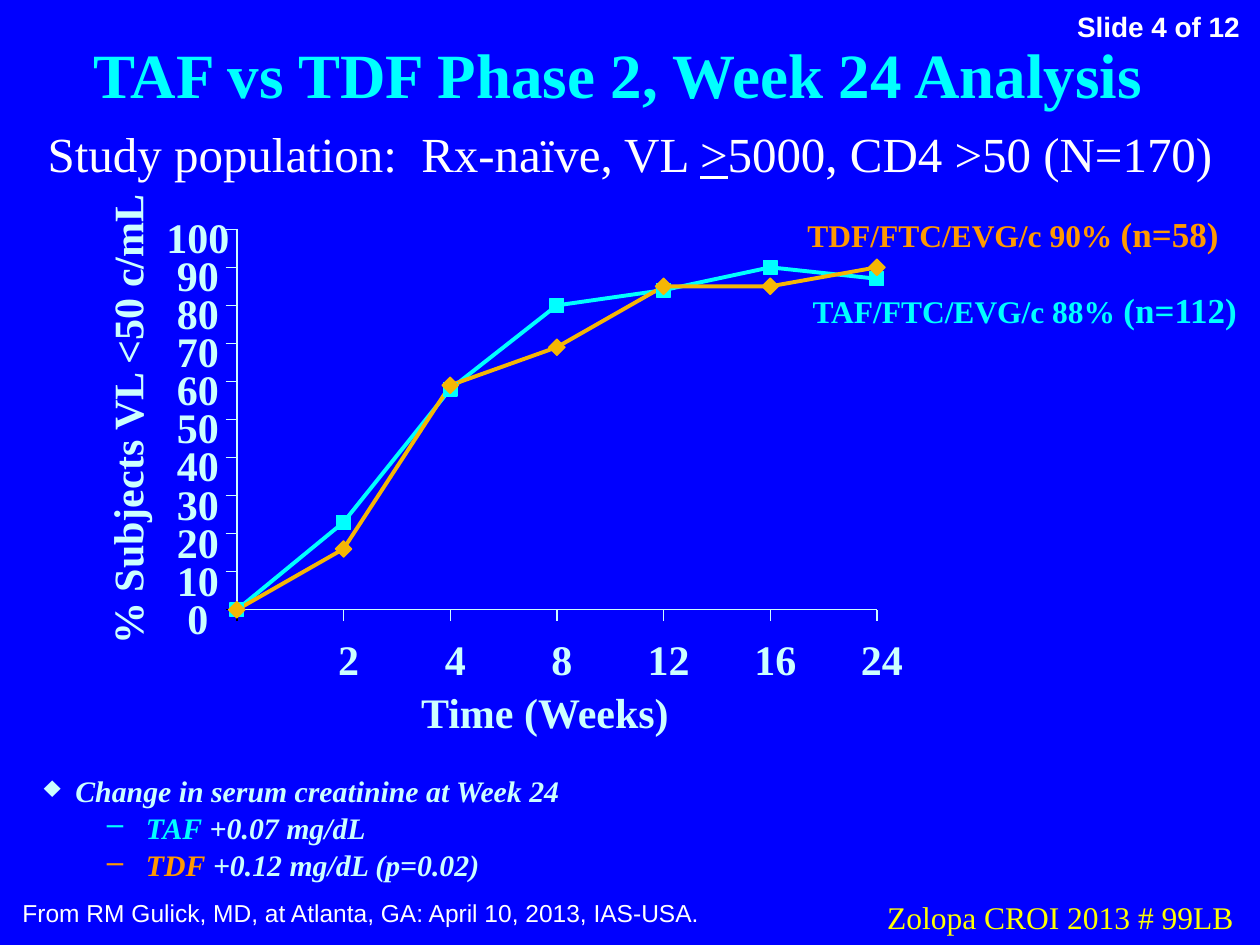
from lxml import etree
from pptx import Presentation
from pptx.dml.color import RGBColor
from pptx.enum import shapes, text
from pptx.oxml.ns import qn
from pptx.util import Inches, Pt

BLUE = RGBColor(0x00, 0x00, 0xFF)
WHITE = RGBColor(0xFF, 0xFF, 0xFF)
BLACK = RGBColor(0x00, 0x00, 0x00)
YELLOW = RGBColor(0xFF, 0xFF, 0x00)
CYAN = RGBColor(0x00, 0xFF, 0xFF)
PALE = RGBColor(0xCC, 0xFF, 0xFF)
GOLD = RGBColor(0xF5, 0xB6, 0x05)
ORANGE = RGBColor(0xFF, 0x99, 0x00)
SERIF = "Times New Roman"

# Plot geometry in inches: origin, step per visit, height per percent
ORIGIN_X, ORIGIN_Y = 1.88, 4.84
STEP_X, PERCENT_Y = 5.08 / 6, 3.02 / 100
TICK = 0.09
WEEKS = [0, 2, 4, 8, 12, 16, 24]
TAF = [0, 23, 58, 80, 84, 90, 87]
TDF = [0, 16, 59, 69, 85, 85, 90]


def plot_points(values):
    return [(ORIGIN_X + i * STEP_X, ORIGIN_Y - value * PERCENT_Y)
            for i, value in enumerate(values)]


def style_font(font, size, color, bold=False, italic=False, name=SERIF):
    font.name, font.size, font.bold, font.italic = name, Pt(size), bold, italic
    font.color.rgb = color


def add_text(slide, box, content, size, color, bold=False, name=SERIF,
             align=text.PP_ALIGN.LEFT, inset=True):
    """Add a one-paragraph text box; content is a list of run texts."""
    shape = slide.shapes.add_textbox(*map(Inches, box))
    frame = shape.text_frame
    frame.word_wrap = True
    if not inset:
        frame.margin_left = frame.margin_right = 0
        frame.margin_top = frame.margin_bottom = 0
    paragraph = frame.paragraphs[0]
    paragraph.alignment = align
    style_font(paragraph.font, size, color, bold, name=name)
    for part in content:
        paragraph.add_run().text = part
    return shape


def add_axis_text(slide, box, content):
    return add_text(slide, box, [content], 24, PALE, True,
                    align=text.PP_ALIGN.CENTER, inset=False)


def add_line(slide, x1, y1, x2, y2, color=PALE):
    line = slide.shapes.add_connector(
        shapes.MSO_CONNECTOR.STRAIGHT, *map(Inches, (x1, y1, x2, y2)))
    line.line.color.rgb = color
    line.line.width = Pt(0.75)
    etree.SubElement(line._element.spPr, qn("a:effectLst"))


def add_series_line(slide, values, color):
    start, *rest = [(Inches(x), Inches(y)) for x, y in plot_points(values)]
    builder = slide.shapes.build_freeform(*start)
    builder.add_line_segments(rest, close=False)
    shape = builder.convert_to_shape()
    shape.shadow.inherit = False
    shape.fill.background()
    shape.line.color.rgb = color
    shape.line.width = Pt(2.25)


def add_markers(slide, values, kind, size, color):
    for x, y in plot_points(values):
        marker = slide.shapes.add_shape(
            kind, Inches(x - size / 2), Inches(y - size / 2), Inches(size), Inches(size))
        marker.shadow.inherit = False
        marker.fill.solid()
        marker.fill.fore_color.rgb = color
        marker.line.color.rgb = color
        marker.line.width = Pt(0.75)


def add_axes(slide):
    end_x = ORIGIN_X + STEP_X * (len(WEEKS) - 1)
    add_line(slide, ORIGIN_X, ORIGIN_Y - 100 * PERCENT_Y, ORIGIN_X, ORIGIN_Y)
    add_line(slide, ORIGIN_X, ORIGIN_Y, end_x, ORIGIN_Y)
    for percent in range(0, 101, 10):
        y = ORIGIN_Y - percent * PERCENT_Y
        add_line(slide, ORIGIN_X - TICK, y, ORIGIN_X, y, PALE if percent else BLACK)
        add_axis_text(slide, (1.27, y - 0.14, 0.6, 0.4), str(percent))
    for i, week in enumerate(WEEKS):
        x = ORIGIN_X + i * STEP_X
        add_line(slide, x, ORIGIN_Y + TICK, x, ORIGIN_Y, PALE if week else BLACK)
        if week:
            add_axis_text(slide, (x - 0.26, 5.03, 0.6, 0.4), str(week))
    add_axis_text(slide, (-0.83, 3.13, 3.67, 0.4), "% Subjects VL <50 c/mL").rotation = 270
    add_axis_text(slide, (2.24, 5.45, 4.17, 0.41), "Time (Weeks)")


def add_series_label(slide, box, name, count, color):
    label = add_text(slide, box, [name, count], 18, color, True)
    label.text_frame.paragraphs[0].runs[1].font.size = Pt(20)


def add_bullets(slide, box, items):
    """Add bulleted lines; each item is level, bullet and coloured runs."""
    frame = slide.shapes.add_textbox(*map(Inches, box)).text_frame
    frame.word_wrap = True
    for i, (level, bullet, runs) in enumerate(items):
        paragraph = frame.add_paragraph() if i else frame.paragraphs[0]
        paragraph.level = level
        paragraph.space_before = Pt(1)
        style_font(paragraph.font, 17, runs[0][1], True, True)
        margin, indent = ((0.25, -0.25), (0.81, -0.31))[level]
        properties = paragraph._p.get_or_add_pPr()
        properties.set("marL", str(Inches(margin)))
        properties.set("indent", str(Inches(indent)))
        mark = etree.Element(qn("a:buChar"), char=bullet)
        properties.find(qn("a:defRPr")).addprevious(mark)
        for content, color in runs:
            run = paragraph.add_run()
            run.text = content
            run.font.color.rgb = color


def add_title(slide, content):
    title = slide.shapes.title
    title.left, title.top, title.width, title.height = map(Inches, (0.64, 0.08, 9.36, 1))
    frame = title.text_frame
    frame.text = content
    frame.auto_size = text.MSO_AUTO_SIZE.NONE
    frame.vertical_anchor = text.MSO_ANCHOR.MIDDLE
    frame.paragraphs[0].alignment = text.PP_ALIGN.LEFT
    style_font(frame.paragraphs[0].font, 36, CYAN, True)


def main():
    presentation = Presentation()
    presentation.slide_width, presentation.slide_height = Inches(10), Inches(7.5)
    slide = presentation.slides.add_slide(presentation.slide_layouts[5])
    slide.background.fill.solid()
    slide.background.fill.fore_color.rgb = BLUE

    # Slide number, credit and citation
    right = text.PP_ALIGN.RIGHT
    add_text(slide, (7.78, 0.03, 2.16, 0.38), ["Slide 4 of 12"], 16, WHITE, True, "Arial", right)
    add_text(slide, (0.08, 7.08, 9.92, 0.34),
             ["From RM Gulick, MD, at Atlanta, GA: April 10, 2013, IAS-USA."],
             14, WHITE, name="Arial")
    add_text(slide, (4.83, 7.08, 5.06, 0.5), ["Zolopa CROI 2013 # 99LB"], 18, YELLOW, align=right)

    # Title and study population
    add_title(slide, "TAF vs TDF Phase 2, Week 24 Analysis")
    population = add_text(
        slide, (0, 0.93, 10, 0.57),
        ["Study population:  Rx-naïve, VL ", ">", "5000, CD4 >50 (N=170)"],
        28, WHITE, align=text.PP_ALIGN.CENTER)
    population.text_frame.paragraphs[0].runs[1].font.underline = True

    # Response curves
    add_axes(slide)
    add_series_line(slide, TAF, CYAN)
    add_series_line(slide, TDF, GOLD)
    add_markers(slide, TAF, shapes.MSO_SHAPE.RECTANGLE, 0.11, CYAN)
    add_markers(slide, TDF, shapes.MSO_SHAPE.DIAMOND, 0.13, GOLD)
    add_series_label(slide, (6.35, 2.24, 3.65, 1.03), "TAF/FTC/EVG/c 88% ", "(n=112)", CYAN)
    add_series_label(slide, (6.31, 1.64, 3.69, 1.03), "TDF/FTC/EVG/c 90% ", "(n=58)", ORANGE)

    # Creatinine findings
    add_bullets(slide, (0.25, 6.08, 4.32, 1.02), [
        (0, "♦", [("Change in serum creatinine at Week 24", PALE)]),
        (1, "–", [("TAF", CYAN), (" +0.07 mg/dL", PALE)]),
        (1, "–", [("TDF", ORANGE), (" +0.12 mg/dL (p=0.02)", PALE)]),
    ])
    presentation.save("out.pptx")


if __name__ == "__main__":
    main()
